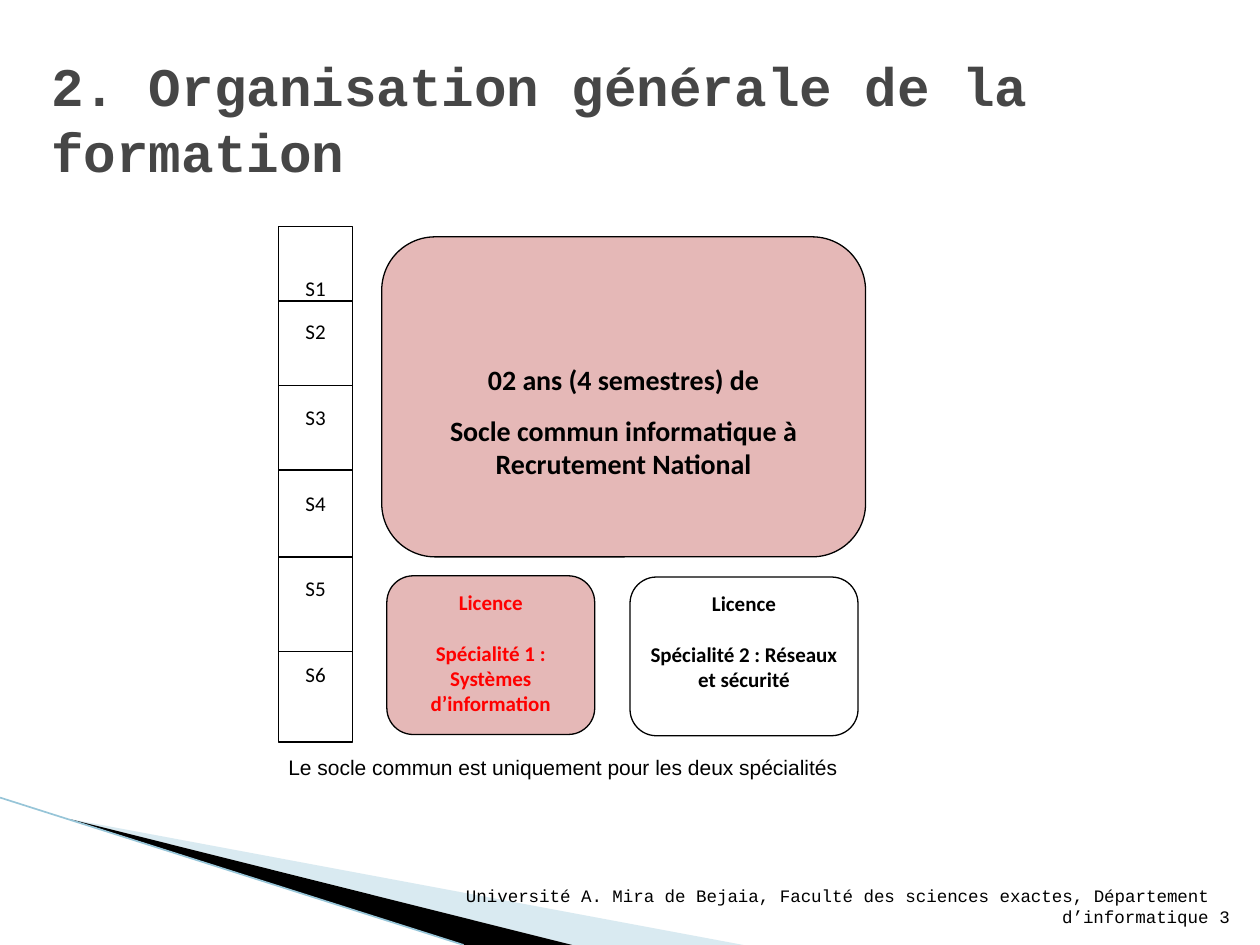
from lxml.etree import SubElement
from pptx import Presentation
from pptx.dml.color import RGBColor
from pptx.enum.shapes import MSO_CONNECTOR as Connector, MSO_SHAPE as Shape
from pptx.enum.text import MSO_ANCHOR as Anchor, PP_ALIGN as Align
from pptx.oxml.ns import qn
from pptx.util import Inches, Pt

COLORS = {
    "paper": "FFFFFF",
    "ink": "000000",
    "title": "464646",
    "rose": "E5B8B7",
    "alert": "FF0000",
    "pale": "A0CBDC",
    "edge": "97C5D8",
}
LABEL = {"name": "Calibri", "size": Pt(12)}
LABEL_BOLD = {**LABEL, "bold": True}
CORE = {"name": "Calibri", "size": Pt(16), "bold": True}
TITLE = {"name": "Courier New", "size": Pt(31), "bold": True}
NOTE = {"name": "Arial", "size": Pt(12)}
FOOTER = {"name": "Courier New", "size": Pt(10)}


def rgb(key):
    return RGBColor.from_string(COLORS[key])


def write(shape, lines, font, color="ink", align=Align.CENTER,
          anchor=Anchor.TOP, top=0.05, spacing=None):
    frame = shape.text_frame
    settings = {"word_wrap": True, "vertical_anchor": anchor, "margin_top": Inches(top)}
    for key, value in settings.items():
        setattr(frame, key, value)
    for index, line in enumerate(lines):
        paragraph = frame.paragraphs[0] if index == 0 else frame.add_paragraph()
        paragraph.text = line
        paragraph.alignment = align
        for key, value in (spacing or {}).items():
            setattr(paragraph, key, value)
        for key, value in font.items():
            setattr(paragraph.font, key, value)
        paragraph.font.color.rgb = rgb(color)
    return frame.paragraphs


def add_text(slide, box, line, font, **options):
    textbox = slide.shapes.add_textbox(*map(Inches, box))
    write(textbox, [line], font, **options)


def add_panel(slide, preset, box, fill):
    panel = slide.shapes.add_shape(preset, *map(Inches, box))
    panel.shadow.inherit = False
    panel.fill.solid()
    panel.fill.fore_color.rgb = rgb(fill)
    panel.line.color.rgb = rgb("ink")
    panel.line.width = Pt(0.75)
    return panel


def add_rule(slide, start, end, color, width):
    rule = slide.shapes.add_connector(
        Connector.STRAIGHT, *map(Inches, (*start, *end)))
    rule.line.color.rgb = rgb(color)
    rule.line.width = Pt(width)
    SubElement(rule._element.spPr, qn("a:effectLst"))


def add_wedge(slide, points, color, opacity=100):
    corners = [(Inches(x), Inches(y)) for x, y in points]
    builder = slide.shapes.build_freeform(*corners[0])
    builder.add_line_segments(corners[1:], close=True)
    wedge = builder.convert_to_shape()
    wedge.shadow.inherit = False
    wedge.fill.solid()
    wedge.fill.fore_color.rgb = rgb(color)
    wedge.line.fill.background()
    if opacity < 100:
        tint = wedge._element.spPr.find(qn("a:solidFill"))[0]
        SubElement(tint, qn("a:alpha"), val=str(opacity * 1000))


def add_corner_decor(slide, box):
    left, top, width, height = box
    bottom = top + height
    tip = (left + 0.55, top + 0.17)
    add_wedge(slide, [tip, (left + 5.9, bottom), (left + 4.54, bottom)], "pale", 40)
    add_wedge(slide, [tip, (left + 4.54, bottom), (left + 3.68, bottom)], "ink")
    add_rule(slide, (left, top), (left + width, bottom), "edge", 0.95)


def add_semesters(slide, box):
    left, top, width, height = box
    column = add_panel(slide, Shape.RECTANGLE, box, "paper")
    semesters = [f"S{number}" for number in range(1, 7)]
    paragraphs = write(column, semesters, LABEL, top=0.39,
                       spacing={"space_after": Pt(10)})
    for paragraph in paragraphs[2:]:
        paragraph.space_before = Pt(24.6)
    for offset in (0.59, 1.26, 1.93, 2.62, 3.37):
        add_rule(slide, (left, top + offset), (left + width, top + offset), "ink", 0.75)


def add_common_core(slide, box):
    core = add_panel(slide, Shape.ROUNDED_RECTANGLE, box, "rose")
    lines = ["02 ans (4 semestres) de",
             "Socle commun informatique à Recrutement National"]
    write(core, lines, CORE, top=0.87, spacing={"space_after": Pt(10)})


def add_speciality(slide, box, name, fill, color):
    speciality = add_panel(slide, Shape.ROUNDED_RECTANGLE, box, fill)
    paragraphs = write(speciality, ["Licence", name], LABEL_BOLD, color)
    paragraphs[0].space_after = Pt(14.6)


def add_footer(slide, box):
    left, top, width, height = box
    add_text(slide, (left + 6.18, top, 0.4, 0.4), "3", FOOTER,
             align=Align.RIGHT, anchor=Anchor.BOTTOM)
    add_text(slide, (left, top + 0.1, width, height - 0.1),
             "Université A. Mira de Bejaia, Faculté des sciences exactes, "
             "Département d’informatique",
             FOOTER, align=Align.RIGHT, anchor=Anchor.BOTTOM)


def main():
    deck = Presentation()
    deck.slide_width, deck.slide_height = Inches(10), Inches(7.5)
    slide = deck.slides.add_slide(deck.slide_layouts[6])
    add_corner_decor(slide, (0, 6.33, 3.68, 1.17))
    add_text(slide, (0.31, 0.31, 9, 1.25), "2. Organisation générale de la formation",
             TITLE, color="title", align=Align.LEFT, anchor=Anchor.MIDDLE)
    add_semesters(slide, (2.21, 1.8, 0.59, 4.09))
    add_common_core(slide, (3.03, 1.88, 3.84, 2.54))
    add_speciality(slide, (3.07, 4.57, 1.65, 1.26),
                   "Spécialité 1\u00a0: Systèmes d’information", "rose", "alert")
    add_speciality(slide, (5, 4.58, 1.81, 1.26),
                   "Spécialité 2\u00a0: Réseaux et sécurité", "paper", "ink")
    add_text(slide, (2.19, 5.94, 4.84, 0.3),
             "Le socle commun est uniquement pour les deux spécialités",
             NOTE, align=Align.LEFT, anchor=Anchor.MIDDLE)
    add_footer(slide, (3.28, 7.01, 6.41, 0.4))
    deck.save("out.pptx")


if __name__ == "__main__":
    main()
